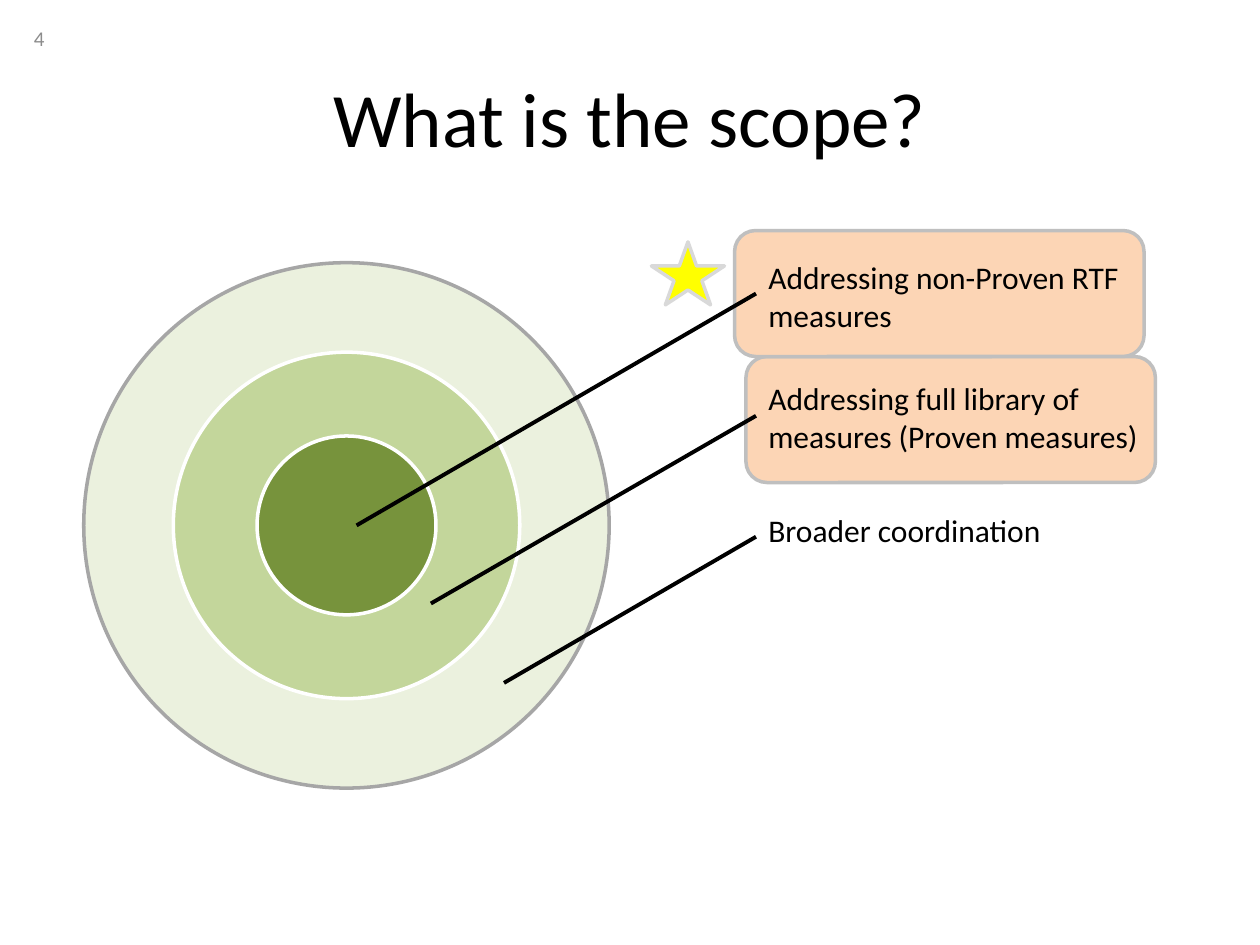
from lxml import etree
from pptx import Presentation
from pptx.dml.color import RGBColor
from pptx.enum.shapes import MSO_CONNECTOR, MSO_SHAPE
from pptx.enum.text import MSO_ANCHOR, PP_ALIGN
from pptx.oxml.ns import qn
from pptx.util import Inches, Pt

ELLIPSE = MSO_SHAPE.OVAL
ROUNDED = MSO_SHAPE.ROUNDED_RECTANGLE
STAR = MSO_SHAPE.STAR_5_POINT
STRAIGHT = MSO_CONNECTOR.STRAIGHT
TOP, MIDDLE = MSO_ANCHOR.TOP, MSO_ANCHOR.MIDDLE
CENTER = PP_ALIGN.CENTER

BLACK = RGBColor(0x00, 0x00, 0x00)
WHITE = RGBColor(0xFF, 0xFF, 0xFF)
NUMBER_GRAY = RGBColor(0x8C, 0x8C, 0x8C)
RING_GRAY = RGBColor(0xA6, 0xA6, 0xA6)
BOX_GRAY = RGBColor(0xBF, 0xBF, 0xBF)
STAR_GRAY = RGBColor(0xD9, 0xD9, 0xD9)
PEACH = RGBColor(0xFC, 0xD5, 0xB5)
YELLOW = RGBColor(0xFF, 0xFF, 0x00)
PALE_GREEN = RGBColor(0xEB, 0xF1, 0xDE)
LIGHT_GREEN = RGBColor(0xC3, 0xD6, 0x9B)
DARK_GREEN = RGBColor(0x77, 0x93, 0x3C)


class SlideBuilder:
    """Holds the style and the current slide."""

    font_name = "Calibri"
    outline_width = Pt(2)
    leader_width = Pt(2.25)

    def __init__(self, slide):
        self.slide = slide

    def format_text(self, paragraph, size, color):
        for run in paragraph.runs:
            run.font.name = self.font_name
            run.font.size = Pt(size)
            run.font.color.rgb = color

    def title(self, text, left, top, width, height):
        title = self.slide.shapes.title
        title.left, title.top = Inches(left), Inches(top)
        title.width, title.height = Inches(width), Inches(height)
        frame = title.text_frame
        frame.text = text
        frame.vertical_anchor = MIDDLE
        frame.paragraphs[0].alignment = CENTER
        self.format_text(frame.paragraphs[0], 44, BLACK)

    def text(self, text, left, top, width, height, size, color, anchor=TOP):
        box = self.slide.shapes.add_textbox(
            Inches(left), Inches(top), Inches(width), Inches(height))
        frame = box.text_frame
        frame.word_wrap = True
        frame.vertical_anchor = anchor
        frame.text = text
        self.format_text(frame.paragraphs[0], size, color)

    def shape(self, kind, left, top, width, height, fill, outline):
        shape = self.slide.shapes.add_shape(
            kind, Inches(left), Inches(top), Inches(width), Inches(height))
        shape.shadow.inherit = False
        shape.fill.solid()
        shape.fill.fore_color.rgb = fill
        shape.line.color.rgb = outline
        shape.line.width = self.outline_width

    def ring(self, center_x, center_y, diameter, fill, outline):
        radius = diameter / 2
        self.shape(ELLIPSE, center_x - radius, center_y - radius,
                   diameter, diameter, fill, outline)

    def leader(self, start_x, start_y, end_x, end_y):
        line = self.slide.shapes.add_connector(
            STRAIGHT, Inches(start_x), Inches(start_y),
            Inches(end_x), Inches(end_y))
        line.line.color.rgb = BLACK
        line.line.width = self.leader_width
        etree.SubElement(line._element.spPr, qn("a:effectLst"))


def main():
    presentation = Presentation()
    presentation.slide_width = Inches(10)
    presentation.slide_height = Inches(7.5)
    title_only = presentation.slide_layouts[5]
    builder = SlideBuilder(presentation.slides.add_slide(title_only))

    # Title and slide number
    builder.title("What is the scope?", 0.5, 0.3, 9, 1.25)
    builder.text("4", 0.17, 0.1, 2.33, 0.4, 12, NUMBER_GRAY, MIDDLE)

    # Highlight boxes, the upper one in front
    for left, top in ((5.92, 2.83), (5.83, 1.83)):
        builder.shape(ROUNDED, left, top, 3.25, 1, PEACH, BOX_GRAY)

    # Concentric scope rings, widest first
    for diameter, fill, outline in (
        (4.17, PALE_GREEN, RING_GRAY),
        (2.75, LIGHT_GREEN, WHITE),
        (1.42, DARK_GREEN, WHITE),
    ):
        builder.ring(2.75, 4.17, diameter, fill, outline)

    # Each scope: leader from its ring, then its label
    label_left = 6
    scopes = (
        ("Addressing non-Proven RTF measures", 2.83, 4.17, 2.33, 2, 0.71),
        ("Addressing full library of measures (Proven measures)",
         3.42, 4.79, 3.3, 2.96, 0.71),
        ("Broader coordination", 4, 5.42, 4.26, 4.01, 0.4),
    )
    for label, ring_x, ring_y, leader_end_y, label_top, height in scopes:
        builder.leader(ring_x, ring_y, label_left, leader_end_y)
        builder.text(label, label_left, label_top, 3.27, height, 18, BLACK)

    # Star marking the first scope
    builder.shape(STAR, 5.17, 1.92, 0.58, 0.5, YELLOW, STAR_GRAY)

    presentation.save("out.pptx")


if __name__ == "__main__":
    main()
